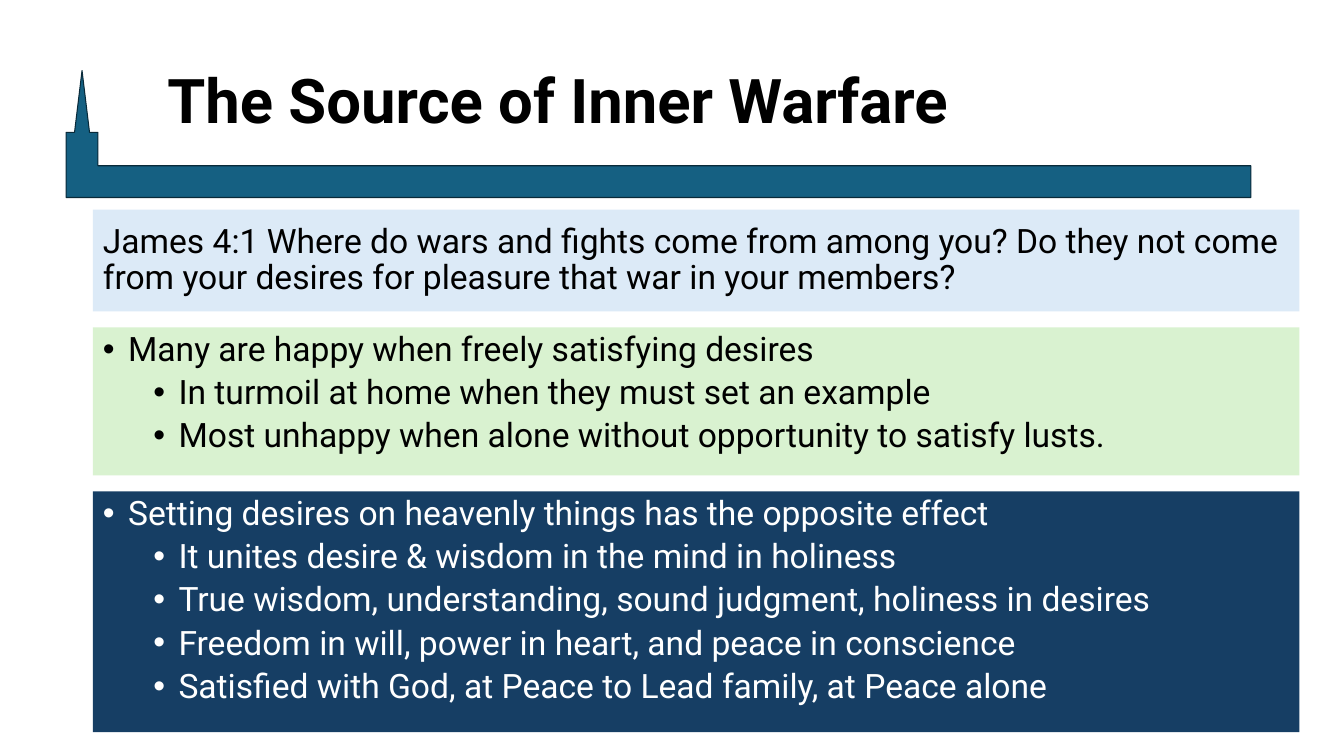
import pptx
import pptx.util
import pptx.dml.color
import pptx.enum.shapes
import pptx.enum.text
import pptx.oxml.ns
from lxml import etree

Pt = pptx.util.Pt
RGBColor = pptx.dml.color.RGBColor
MSO_ANCHOR = pptx.enum.text.MSO_ANCHOR

BLACK = RGBColor(0x00, 0x00, 0x00)
WHITE = RGBColor(0xFF, 0xFF, 0xFF)
TEAL = RGBColor(0x15, 0x60, 0x82)
TEAL_DARK = RGBColor(0x09, 0x2A, 0x39)
PALE_BLUE = RGBColor(0xDC, 0xEA, 0xF7)
PALE_GREEN = RGBColor(0xD9, 0xF2, 0xD0)
NAVY = RGBColor(0x16, 0x3E, 0x64)
FONT = "Roboto"

# Content
TITLE = "The Source of Inner Warfare"
VERSE = ["James 4:1 Where do wars and fights come from among you? Do they not come "
         "from your desires for pleasure that war in your members?"]
UNHAPPY = ["Many are happy when freely satisfying desires",
           "In turmoil at home when they must set an example",
           "Most unhappy when alone without opportunity to satisfy lusts."]
HEAVENLY = ["Setting desires on heavenly things has the opposite effect",
            "It unites desire & wisdom in the mind in holiness",
            "True wisdom, understanding, sound judgment, holiness in desires",
            "Freedom in will, power in heart, and peace in conscience",
            "Satisfied with God, at Peace to Lead family, at Peace alone"]
# placeholder index, lines, height, fill, text colour, bulleted
PANELS = [(1, VERSE, 72.7, PALE_BLUE, BLACK, False),
          (2, UNHAPPY, 105.8, PALE_GREEN, BLACK, True),
          (4, HEAVENLY, 172.1, NAVY, WHITE, True)]
PANEL_LEFT, PANEL_TOP, PANEL_WIDTH, PANEL_GAP = 66.3, 149.8, 861.8, 11.3


def place(sp, left, top, width, height):
    sp.left, sp.top, sp.width, sp.height = Pt(left), Pt(top), Pt(width), Pt(height)


def set_bullet(p, bulleted):
    pPr = p._p.get_or_add_pPr()
    indent = 18 if bulleted else 0
    pPr.set("marL", str(Pt(indent + 36 * p.level)))
    pPr.set("indent", str(Pt(-indent)))
    if bulleted:
        font = etree.SubElement(pPr, pptx.oxml.ns.qn("a:buFont"))
        font.set("typeface", "Arial")
        etree.SubElement(pPr, pptx.oxml.ns.qn("a:buChar")).set("char", "•")
    else:
        etree.SubElement(pPr, pptx.oxml.ns.qn("a:buNone"))


def add_text(p, text, size, color, bold):
    p.line_spacing = 0.9
    r = p.add_run()
    r.text = text
    r.font.name, r.font.size, r.font.bold = FONT, Pt(size), bold
    r.font.color.rgb = color


def prepare_frame(sp, anchor):
    tf = sp.text_frame
    tf.word_wrap = True
    tf.auto_size = pptx.enum.text.MSO_AUTO_SIZE.NONE
    tf.vertical_anchor = anchor
    return tf


prs = pptx.Presentation()
prs.slide_width, prs.slide_height = Pt(960), Pt(540)
s = prs.slides.add_slide(prs.slide_layouts[4])
holders = {sp.placeholder_format.idx: sp for sp in s.placeholders}

# Steeple-shaped arrow behind the title
sp = s.shapes.add_shape(pptx.enum.shapes.MSO_SHAPE.BENT_UP_ARROW,
                        Pt(53.3), Pt(50.4), Pt(840.2), Pt(90.7))
for i, value in enumerate((0.25, 0.059, 0.487)):
    sp.adjustments[i] = value
sp._element.spPr.xfrm.set("flipH", "1")
sp.shadow.inherit = False
sp.fill.solid()
sp.fill.fore_color.rgb = TEAL
sp.line.color.rgb = TEAL_DARK
sp.line.width = Pt(0.75)
s.shapes._spTree.insert(2, sp._element)

# Title
place(s.shapes.title, 112.3, 28.8, 781.9, 90.7)
p = prepare_frame(s.shapes.title, MSO_ANCHOR.MIDDLE).paragraphs[0]
p.alignment = pptx.enum.text.PP_ALIGN.LEFT
add_text(p, TITLE, 44, BLACK, True)

# Stacked text panels
top = PANEL_TOP
for idx, lines, height, fill, color, bulleted in PANELS:
    sp = holders.pop(idx)
    place(sp, PANEL_LEFT, top, PANEL_WIDTH, height)
    sp.fill.solid()
    sp.fill.fore_color.rgb = fill
    tf = prepare_frame(sp, MSO_ANCHOR.TOP if bulleted else MSO_ANCHOR.MIDDLE)
    for i, line in enumerate(lines):
        p = tf.add_paragraph() if i else tf.paragraphs[0]
        p.level = 1 if i else 0
        p.space_before = Pt(5 if i else 0)
        set_bullet(p, bulleted)
        add_text(p, line, 24, color, False)
    top += height + PANEL_GAP

# Unused placeholders
for idx, sp in holders.items():
    if idx:
        sp._element.getparent().remove(sp._element)

prs.save("out.pptx")
